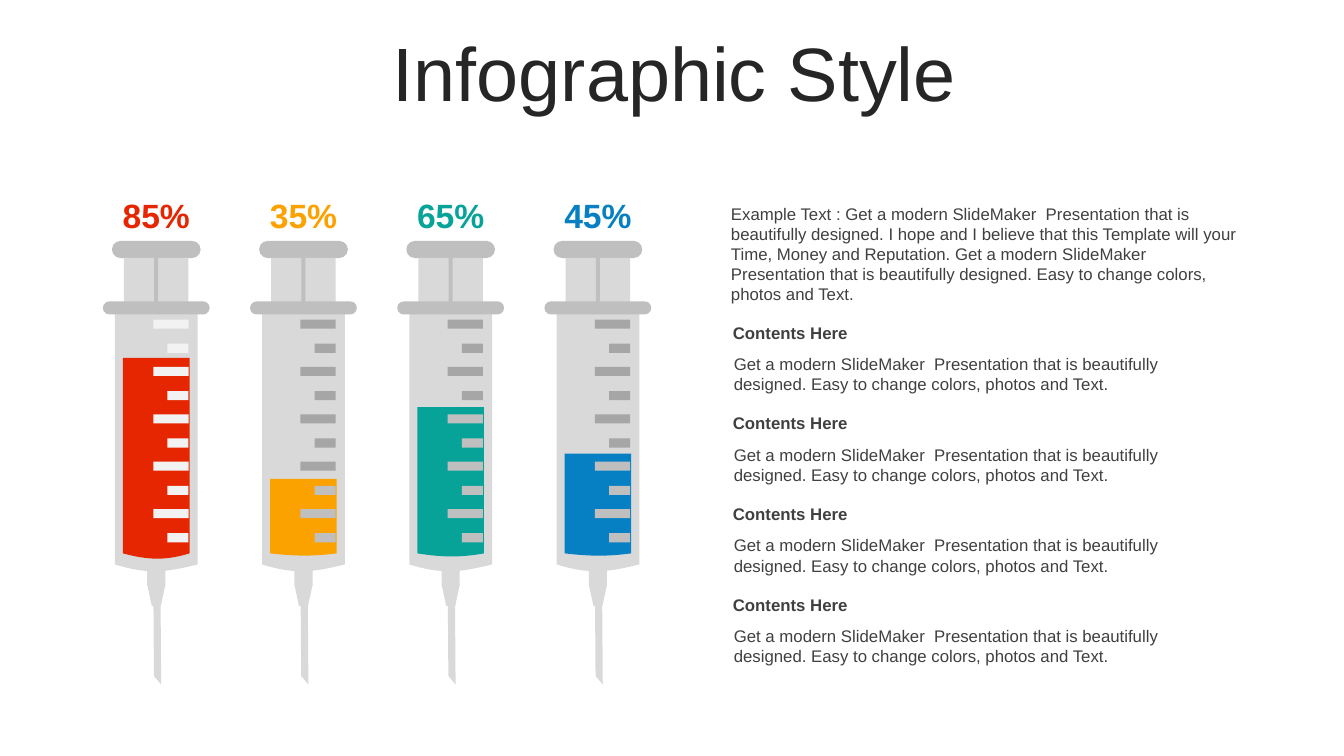
from dataclasses import dataclass

from lxml.etree import SubElement
from pptx import Presentation
from pptx.dml.color import RGBColor
from pptx.enum.shapes import MSO_SHAPE as Shape
from pptx.enum.text import MSO_ANCHOR as Anchor
from pptx.enum.text import MSO_AUTO_SIZE as AutoSize
from pptx.enum.text import PP_ALIGN as Align
from pptx.oxml.ns import qn
from pptx.util import Pt

PX = 9144


@dataclass(frozen=True)
class Theme:
    font: str = "Arial"
    title_size: int = 54
    label_size: int = 24
    body_size: int = 12
    title: str = "262626"
    text: str = "404040"
    glass: str = "D9D9D9"
    metal: str = "BFBFBF"
    mark: str = "A6A6A6"
    pale: str = "F2F2F2"
    red: str = "E62601"
    orange: str = "FBA200"
    teal: str = "07A398"
    blue: str = "0680C3"


@dataclass(frozen=True)
class Syringe:
    label: str
    color: str
    level: int
    dip: int
    mark_above: str
    mark_below: str


class SlideBuilder:
    def __init__(self, slide, theme):
        self.theme = theme
        self.slide = slide
        self.shapes = slide.shapes

    def start_group(self):
        self.shapes = self.slide.shapes.add_group_shape().shapes

    def end_group(self):
        self.shapes = self.slide.shapes

    def paint(self, shape, color):
        shape.shadow.inherit = False
        shape.fill.solid()
        shape.fill.fore_color.rgb = RGBColor.from_string(color)
        shape.line.fill.background()

    def shape(self, kind, left, top, width, height, color, rotation=0, adjust=None):
        shape = self.shapes.add_shape(kind, left * PX, top * PX, width * PX, height * PX)
        self.paint(shape, color)
        shape.rotation = rotation
        if adjust is not None:
            shape.adjustments[0] = adjust

    def vessel(self, left, top, width, base, controls, dips, color):
        corners = [(left + width, top), (left + width, base)]
        handles = [(left + x, base + dip) for x, dip in zip(controls, dips)]
        outline = self.shapes.build_freeform(left, top, scale=PX)
        outline.add_line_segments(corners + handles + [(left, base)], close=True)
        shape = outline.convert_to_shape()
        self.paint(shape, color)
        bottom_lines = shape.element.xpath(".//a:lnTo")[2:5]
        geometry = bottom_lines[0].getparent()
        curve = SubElement(geometry, qn("a:cubicBezTo"))
        bottom_lines[0].addprevious(curve)
        for line in bottom_lines:
            curve.append(line[0])
            geometry.remove(line)

    def text(self, words, left, top, width, height, size, color, bold=False,
             align=Align.LEFT, insets=(10, 10), grow=True):
        box = self.shapes.add_textbox(left * PX, top * PX, width * PX, height * PX)
        frame = box.text_frame
        frame.word_wrap = True
        frame.auto_size = AutoSize.SHAPE_TO_FIT_TEXT if grow else AutoSize.NONE
        frame.margin_left, frame.margin_right = (inset * PX for inset in insets)
        frame.margin_top = frame.margin_bottom = 5 * PX
        paragraph = frame.paragraphs[0]
        paragraph.alignment = align
        run = paragraph.add_run()
        run.text = words
        run.font.name = self.theme.font
        run.font.size = Pt(size)
        run.font.bold = bold
        run.font.color.rgb = RGBColor.from_string(color)
        return frame

    def title(self, words):
        frame = self.text(words, 36, 37, 1266, 79, self.theme.title_size,
                          self.theme.title, align=Align.CENTER, grow=False)
        frame.vertical_anchor = Anchor.MIDDLE
        frame.paragraphs[0].line_spacing = 0.9
        frame.paragraphs[0].space_before = Pt(10)

    def syringe(self, left, syringe):
        glass, metal = self.theme.glass, self.theme.metal
        self.start_group()
        self.shape(Shape.DIAGONAL_STRIPE, left + 24, 586, 67, 81, glass, 320, 0.863)
        self.vessel(left + 12, 311, 82, 560, (49, 33), (8, 10), glass)
        self.shape(Shape.ROUNDED_RECTANGLE, left + 9, 239, 88, 17, metal, adjust=0.5)
        self.shape(Shape.RECTANGLE, left + 21, 256, 64, 46, glass)
        self.shape(Shape.RECTANGLE, left + 44, 564, 18, 17, glass)
        self.shape(Shape.TRAPEZOID, left + 44, 580, 18, 21, glass, 180)
        self.shape(Shape.ROUNDED_RECTANGLE, left, 299, 106, 13, metal, adjust=0.5)
        self.vessel(left + 20, syringe.level, 66, 549, (43, 26),
                    (syringe.dip, syringe.dip), syringe.color)
        self.shape(Shape.RECTANGLE, left + 51, 256, 4, 46, metal)
        for index in range(10):
            top = 317 + (47 * index + 1) // 2
            width = 21 if index % 2 else 35
            color = syringe.mark_above if top < syringe.level else syringe.mark_below
            self.shape(Shape.RECTANGLE, left + 85 - width, top, width, 9, color)
        self.end_group()
        self.text(syringe.label, left + 4, 188, 98, 50, self.theme.label_size,
                  syringe.color, bold=True, align=Align.CENTER, insets=(12, 12))

    def content(self, top, heading, body):
        size, color = self.theme.body_size, self.theme.text
        self.start_group()
        self.text(body, 718, top + 31, 517, 50, size, color)
        self.text(heading, 717, top, 518, 30, size, color, bold=True, insets=(10, 12))
        self.end_group()


def main():
    theme = Theme()
    presentation = Presentation()
    presentation.slide_width = 1333 * PX
    presentation.slide_height = 750 * PX
    slide = presentation.slides.add_slide(presentation.slide_layouts[6])
    builder = SlideBuilder(slide, theme)

    builder.title("Infographic Style")

    syringes = (
        Syringe("85%", theme.red, 355, 7, theme.pale, theme.pale),
        Syringe("35%", theme.orange, 475, 3, theme.mark, theme.metal),
        Syringe("65%", theme.teal, 404, 4, theme.mark, theme.metal),
        Syringe("45%", theme.blue, 450, 3, theme.mark, theme.metal),
    )
    for index, syringe in enumerate(syringes):
        builder.syringe(102 + 146 * index, syringe)

    offer = "Get a modern SlideMaker  Presentation that is beautifully designed."
    ending = "Easy to change colors, photos and Text."
    builder.text(
        f"Example Text : {offer} I hope and I believe that this Template will your "
        f"Time, Money and Reputation. {offer} {ending}",
        717, 197, 529, 111, theme.body_size, theme.text, insets=(8, 12))
    for index in range(4):
        builder.content(315 + 90 * index, "Contents Here", f"{offer} {ending}")

    presentation.save("out.pptx")


if __name__ == "__main__":
    main()
